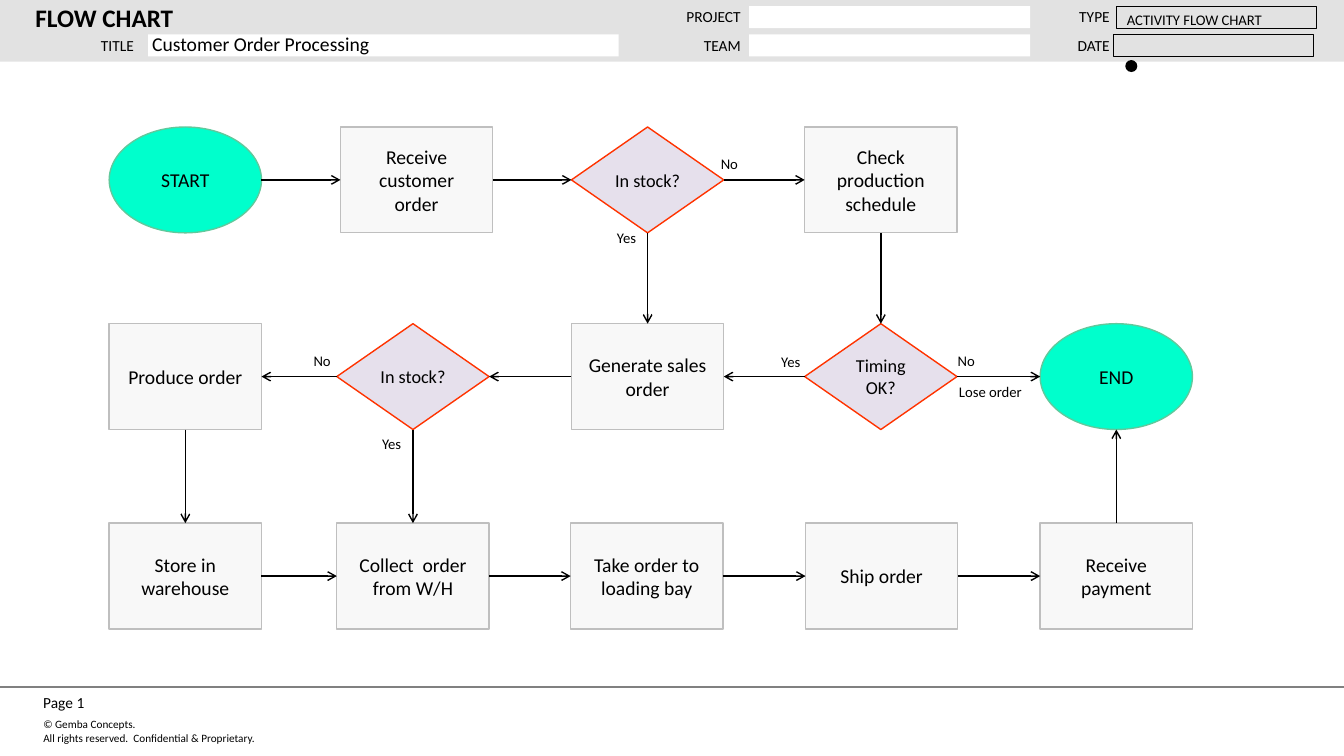
from dataclasses import dataclass

from lxml import etree
from pptx import Presentation
from pptx.dml.color import RGBColor
from pptx.enum.shapes import MSO_CONNECTOR, MSO_SHAPE
from pptx.enum.text import MSO_ANCHOR, PP_ALIGN
from pptx.oxml.ns import qn
from pptx.shapes.autoshape import Shape
from pptx.shapes.connector import Connector
from pptx.shapes.shapetree import SlideShapes
from pptx.util import Pt

RECT, OVAL, DIAMOND = MSO_SHAPE.RECTANGLE, MSO_SHAPE.OVAL, MSO_SHAPE.DIAMOND
STRAIGHT = MSO_CONNECTOR.STRAIGHT
LEFT, CENTER, RIGHT = PP_ALIGN.LEFT, PP_ALIGN.CENTER, PP_ALIGN.RIGHT
TOP, MIDDLE = MSO_ANCHOR.TOP, MSO_ANCHOR.MIDDLE

BLACK = RGBColor(0x00, 0x00, 0x00)
WHITE = RGBColor(0xFF, 0xFF, 0xFF)
BAND_GRAY = RGBColor(0xE2, 0xE2, 0xE2)
RULE_GRAY = RGBColor(0x80, 0x80, 0x80)
STEP_FILL = RGBColor(0xF8, 0xF8, 0xF8)
STEP_LINE = RGBColor(0xBF, 0xBF, 0xBF)
TERMINAL_FILL = RGBColor(0x00, 0xFF, 0xCC)
TERMINAL_LINE = RGBColor(0x60, 0xC9, 0x9C)
DECISION_FILL = RGBColor(0xE6, 0xE0, 0xEC)
DECISION_LINE = RGBColor(0xFF, 0x33, 0x00)

FONT = "Calibri"
SLIDE_WIDTH, SLIDE_HEIGHT = 960, 540
COLUMNS = (78, 240.6, 408.2, 574.8, 743)
ROWS = (90.7, 231.2, 373.7)
NODE_WIDTH, NODE_HEIGHT = 108.8, 75.6
# Connection sites shared by rectangles and diamonds
SITES = {"top": 0, "left": 1, "bottom": 2, "right": 3}


@dataclass(frozen=True)
class NodeStyle:
    geometry: MSO_SHAPE
    fill: RGBColor
    line: RGBColor
    size: float
    insets: tuple[float, float]


STEP = NodeStyle(RECT, STEP_FILL, STEP_LINE, 14, (7.2, 3.6))
TERMINAL = NodeStyle(OVAL, TERMINAL_FILL, TERMINAL_LINE, 14, (7.2, 3.6))
DECISION = NodeStyle(DIAMOND, DECISION_FILL, DECISION_LINE, 13, (2.9, 2.9))


@dataclass(frozen=True)
class Node:
    text: str
    style: NodeStyle
    column: int
    row: int
    shift: float = 0


@dataclass(frozen=True)
class Flow:
    source: str
    exit_side: str
    target: str
    entry_side: str


@dataclass(frozen=True)
class Caption:
    text: str
    left: float
    top: float
    width: float
    height: float
    size: float = 11
    align: PP_ALIGN = RIGHT
    bold: bool = False


NODES = {
    "start": Node("START", TERMINAL, 0, 0),
    "receive": Node("Receive customer\norder", STEP, 1, 0, shift=2.6),
    "order stock": Node("In stock?", DECISION, 2, 0),
    "schedule": Node("Check production schedule", STEP, 3, 0),
    "produce": Node("Produce order", STEP, 0, 1),
    "sales stock": Node("In stock?", DECISION, 1, 1),
    "generate": Node("Generate sales order", STEP, 2, 1),
    "timing": Node("Timing OK?", DECISION, 3, 1),
    "end": Node("END", TERMINAL, 4, 1),
    "store": Node("Store in warehouse", STEP, 0, 2),
    "collect": Node("Collect  order from W/H", STEP, 1, 2),
    "load": Node("Take order to loading bay", STEP, 2, 2, shift=-0.6),
    "ship": Node("Ship order", STEP, 3, 2, shift=0.6),
    "payment": Node("Receive payment", STEP, 4, 2),
}
FLOWS = (
    Flow("start", "right", "receive", "left"),
    Flow("receive", "right", "order stock", "left"),
    Flow("order stock", "right", "schedule", "left"),
    Flow("order stock", "bottom", "generate", "top"),
    Flow("schedule", "bottom", "timing", "top"),
    Flow("timing", "right", "end", "left"),
    Flow("timing", "left", "generate", "right"),
    Flow("generate", "left", "sales stock", "right"),
    Flow("sales stock", "left", "produce", "right"),
    Flow("sales stock", "bottom", "collect", "top"),
    Flow("produce", "bottom", "store", "top"),
    Flow("store", "right", "collect", "left"),
    Flow("collect", "right", "load", "left"),
    Flow("load", "right", "ship", "left"),
    Flow("ship", "right", "payment", "left"),
    Flow("payment", "top", "end", "bottom"),
)
BRANCH_LABELS = (
    Caption("Yes", 432.7, 159.8, 29.5, 20.2),
    Caption("No", 506.2, 106.6, 29.5, 20.2),
    Caption("Yes", 548.6, 248.4, 32.4, 20.2),
    Caption("No", 675.4, 247.7, 29.5, 20.2),
    Caption("Lose order", 673.2, 269.3, 68.4, 20.2),
    Caption("No", 215.3, 247.7, 29.5, 20.2),
    Caption("Yes", 263.5, 306.7, 32.4, 20.2),
)
HEADER_LABELS = (
    Caption("FLOW CHART", 22.3, 0, 416.9, 24.5, size=18, align=LEFT, bold=True),
    Caption("TITLE", 10.8, 23.8, 87.8, 16.6),
    Caption("PROJECT", 450, 3.6, 82.1, 16.6),
    Caption("TEAM", 450, 23.8, 82.1, 16.6),
    Caption("TYPE", 737.3, 3.6, 58.3, 16.6),
    Caption("DATE", 737.3, 23.8, 58.3, 16.6),
)
FOOTER_LABELS = (
    Caption("Page 1", 26.6, 491, 67.7, 21.6, align=LEFT),
    Caption("© Gemba Concepts.\nAll rights reserved.  Confidential & Proprietary.",
            26.6, 508.3, 310.3, 28.1, size=8, align=LEFT),
)


def write_text(shape: Shape, text: str, *, size: float, align: PP_ALIGN = LEFT,
               anchor: MSO_ANCHOR = MIDDLE, insets: tuple[float, float] = (2.9, 2.9),
               bold: bool = False, wrap: bool = True, spacing: float | None = None) -> None:
    frame = shape.text_frame
    frame.text = text
    frame.word_wrap, frame.vertical_anchor = wrap, anchor
    frame.margin_left = frame.margin_right = Pt(insets[0])
    frame.margin_top = frame.margin_bottom = Pt(insets[1])
    for paragraph in frame.paragraphs:
        paragraph.alignment, paragraph.line_spacing = align, spacing
        font = paragraph.font
        font.name, font.size, font.bold = FONT, Pt(size), bold
        font.color.rgb = BLACK


def add_box(shapes: SlideShapes, left: float, top: float, width: float, height: float, *,
            geometry: MSO_SHAPE = RECT, fill: RGBColor | None = None,
            line: RGBColor | None = None, weight: float = 1) -> Shape:
    box = shapes.add_shape(geometry, Pt(left), Pt(top), Pt(width), Pt(height))
    box.shadow.inherit = False
    if fill is None:
        box.fill.background()
    else:
        box.fill.solid()
        box.fill.fore_color.rgb = fill
    if line is None:
        box.line.fill.background()
    else:
        box.line.color.rgb, box.line.width = line, Pt(weight)
    return box


def add_caption(shapes: SlideShapes, caption: Caption) -> Shape:
    return shapes.add_textbox(Pt(caption.left), Pt(caption.top),
                              Pt(caption.width), Pt(caption.height))


def add_line(shapes: SlideShapes, start: tuple[int, int], end: tuple[int, int],
             color: RGBColor, weight: float) -> Connector:
    line = shapes.add_connector(STRAIGHT, *start, *end)
    line.line.color.rgb, line.line.width = color, Pt(weight)
    etree.SubElement(line._element.spPr, qn("a:effectLst"))
    return line


def side_point(shape: Shape, side: str) -> tuple[int, int]:
    x = {"left": 0, "right": shape.width}.get(side, shape.width // 2)
    y = {"top": 0, "bottom": shape.height}.get(side, shape.height // 2)
    return shape.left + x, shape.top + y


def draw_node(shapes: SlideShapes, node: Node) -> Shape:
    style = node.style
    box = add_box(shapes, COLUMNS[node.column] + node.shift, ROWS[node.row], NODE_WIDTH,
                  NODE_HEIGHT, geometry=style.geometry, fill=style.fill, line=style.line)
    write_text(box, node.text, size=style.size, align=CENTER, insets=style.insets)
    return box


def draw_flow(shapes: SlideShapes, flow: Flow, drawn: dict[str, Shape]) -> None:
    """Draw an arrow between two nodes, glued wherever the node has four sites."""
    source, target = drawn[flow.source], drawn[flow.target]
    arrow = add_line(shapes, side_point(source, flow.exit_side),
                     side_point(target, flow.entry_side), BLACK, 1)
    etree.SubElement(arrow.line._get_or_add_ln(), qn("a:tailEnd"), type="arrow")
    if source.auto_shape_type != OVAL:
        arrow.begin_connect(source, SITES[flow.exit_side])
    if target.auto_shape_type != OVAL:
        arrow.end_connect(target, SITES[flow.entry_side])


def draw_header(shapes: SlideShapes) -> None:
    add_box(shapes, 0, 0, SLIDE_WIDTH, 44, fill=BAND_GRAY)
    for label in HEADER_LABELS:
        write_text(add_caption(shapes, label), label.text, size=label.size,
                   align=label.align, bold=label.bold)
    title_field = add_box(shapes, 105.8, 24.5, 336.2, 15.8, fill=WHITE)
    write_text(title_field, "Customer Order Processing", size=14, spacing=0.9)
    for top in (4.3, 24.5):
        add_box(shapes, 535, top, 200.9, 15.8, fill=WHITE)
    type_field = add_box(shapes, 797.8, 4.3, 142.6, 15.8, line=BLACK, weight=0.75)
    write_text(type_field, "ACTIVITY FLOW CHART", size=10.5, anchor=TOP, insets=(7.2, 3.6))
    add_box(shapes, 795.6, 24.5, 142.6, 15.8, line=BLACK, weight=0.75)
    add_box(shapes, 803.8, 42.9, 8.6, 8.6, geometry=OVAL, fill=BLACK)


def draw_footer(shapes: SlideShapes) -> None:
    add_line(shapes, (0, Pt(491)), (Pt(SLIDE_WIDTH), Pt(491)), RULE_GRAY, 1.5)
    for label in FOOTER_LABELS:
        write_text(add_caption(shapes, label), label.text, size=label.size,
                   anchor=TOP, insets=(4.3, 4.3))


def main() -> None:
    deck = Presentation()
    deck.slide_width, deck.slide_height = Pt(SLIDE_WIDTH), Pt(SLIDE_HEIGHT)
    shapes = deck.slides.add_slide(deck.slide_layouts[6]).shapes
    draw_footer(shapes)
    draw_header(shapes)
    drawn = {key: draw_node(shapes, node) for key, node in NODES.items()}
    for flow in FLOWS:
        draw_flow(shapes, flow, drawn)
    for label in BRANCH_LABELS:
        write_text(add_caption(shapes, label), label.text, size=10.5, align=CENTER,
                   insets=(7.2, 3.6), wrap=False)
    deck.save("out.pptx")


if __name__ == "__main__":
    main()
